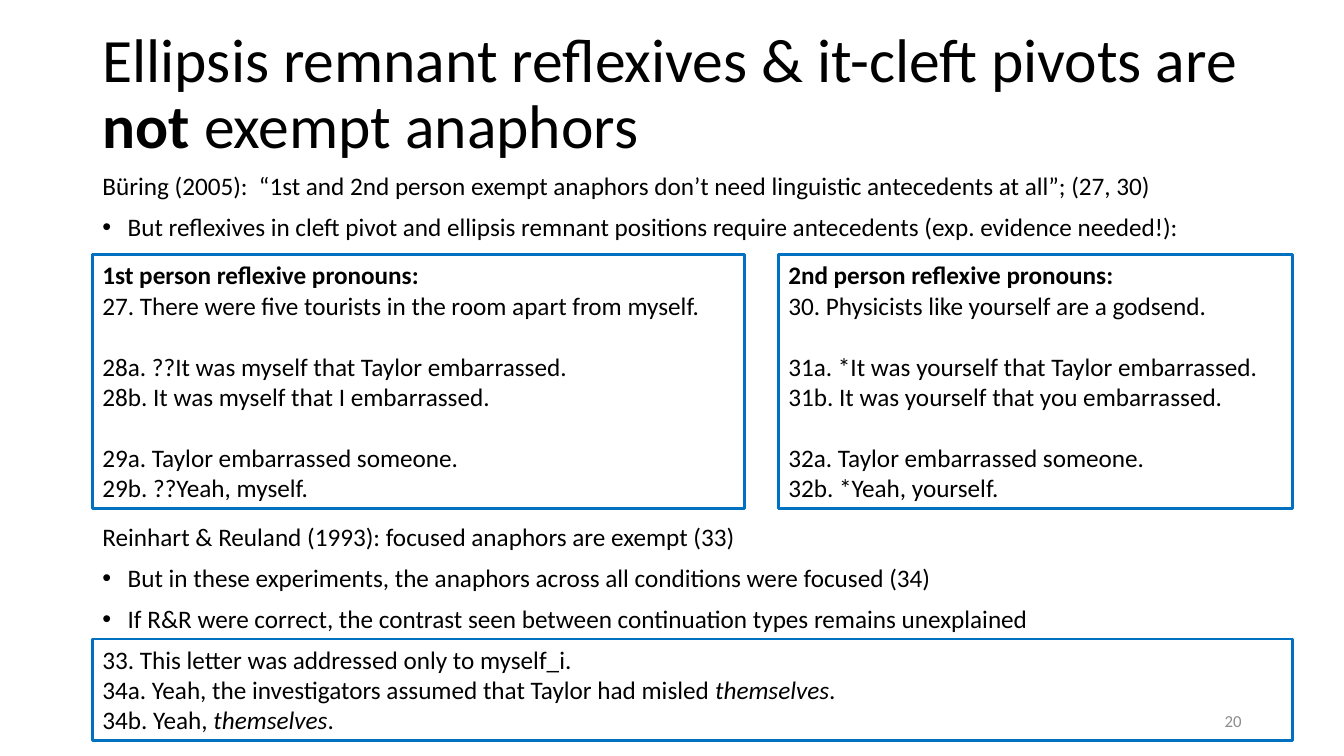
from dataclasses import dataclass

from lxml.etree import SubElement
from pptx import Presentation
from pptx.dml.color import RGBColor as RGB
from pptx.enum.shapes import MSO_SHAPE as SHAPE
from pptx.enum.text import MSO_ANCHOR as ANCHOR, MSO_AUTO_SIZE as AUTO, PP_ALIGN as ALIGN
from pptx.oxml.ns import qn
from pptx.util import Pt


@dataclass(frozen=True)
class Theme:
    font: str = "Calibri"
    ink: RGB = RGB(0x00, 0x00, 0x00)
    muted: RGB = RGB(0x8C, 0x8C, 0x8C)
    frame: RGB = RGB(0x00, 0x70, 0xC0)
    title: int = 44
    body: int = 18
    number: int = 12
    line: int = 2
    tight: float = 0.9
    list_gap: int = 10
    group_gap: int = 22
    indent: int = 18


class SlideBuilder:
    def __init__(self, slide, theme):
        self.slide, self.theme = slide, theme

    def place(self, sp, left, top, width, height):
        sp.left, sp.top, sp.width, sp.height = map(Pt, (left, top, width, height))

    def frame(self, sp, anchor=ANCHOR.TOP):
        """Prepare the text frame of a shape and return it."""
        tf = sp.text_frame
        tf.word_wrap = True
        tf.auto_size = AUTO.NONE
        tf.vertical_anchor = anchor
        return tf

    def paragraph(self, tf, first, align=ALIGN.LEFT):
        p = tf.paragraphs[0] if first else tf.add_paragraph()
        p.alignment = align
        return p

    def run(self, p, text, size, color=None, bold=False, italic=False):
        r = p.add_run()
        r.text = text
        font = r.font
        font.name, font.size, font.bold, font.italic = self.theme.font, Pt(size), bold, italic
        font.color.rgb = color or self.theme.ink

    def title(self, box, parts):
        """Fill the title with (text, bold) parts."""
        sp = self.slide.shapes.title
        self.place(sp, *box)
        p = self.paragraph(self.frame(sp, ANCHOR.MIDDLE), True)
        p.line_spacing = self.theme.tight
        for text, bold in parts:
            self.run(p, text, self.theme.title, bold=bold)

    def claim(self, idx, box, lead, points):
        """Fill a body placeholder with a plain lead line and bulleted points."""
        t = self.theme
        sp = self.slide.placeholders[idx]
        self.place(sp, *box)
        tf = self.frame(sp)
        for i, text in enumerate([lead, *points]):
            p = self.paragraph(tf, i == 0)
            p.line_spacing, p.space_before = t.tight, Pt(t.list_gap)
            indent = Pt(t.indent) if i else 0
            pPr = p._p.get_or_add_pPr()
            pPr.set("marL", str(indent))
            pPr.set("indent", str(-indent))
            if i:
                SubElement(pPr, qn("a:buFont"), typeface="Arial")
                SubElement(pPr, qn("a:buChar"), char="•")
            else:
                SubElement(pPr, qn("a:buNone"))
            self.run(p, text, t.body)

    def examples(self, box, groups, heading=None):
        """Draw a framed box of example groups; odd parts of a line are italic."""
        t = self.theme
        sp = self.slide.shapes.add_shape(SHAPE.RECTANGLE, *map(Pt, box))
        sp.shadow.inherit = False
        sp.fill.background()
        sp.line.color.rgb, sp.line.width = t.frame, Pt(t.line)
        tf = self.frame(sp)
        if heading:
            self.run(self.paragraph(tf, True), heading, t.body, bold=True)
        for g, group in enumerate(groups):
            for i, parts in enumerate(group):
                p = self.paragraph(tf, not heading and g == i == 0)
                if g and i == 0:
                    p.space_before = Pt(t.group_gap)
                for k, text in enumerate(parts):
                    self.run(p, text, t.body, italic=k % 2 == 1)

    def number(self, box, text):
        sp = self.slide.shapes.add_textbox(*map(Pt, box))
        p = self.paragraph(self.frame(sp, ANCHOR.MIDDLE), True, ALIGN.RIGHT)
        self.run(p, text, self.theme.number, self.theme.muted)


LEFT, WIDTH = 66, 857
PAIR_TOP, PAIR_HEIGHT = 182, 181.5

FIRST_PERSON = [
    [["27. There were five tourists in the room apart from myself."]],
    [["28a. ??It was myself that Taylor embarrassed."],
     ["28b. It was myself that I embarrassed."]],
    [["29a. Taylor embarrassed someone."], ["29b. ??Yeah, myself."]],
]
SECOND_PERSON = [
    [["30. Physicists like yourself are a godsend."]],
    [["31a. *It was yourself that Taylor embarrassed."],
     ["31b. It was yourself that you embarrassed."]],
    [["32a. Taylor embarrassed someone."], ["32b. *Yeah, yourself."]],
]
FOCUSED = [[
    ["33. This letter was addressed only to myself_i."],
    ["34a. Yeah, the investigators assumed that Taylor had misled ", "themselves", "."],
    ["34b. Yeah, ", "themselves", "."],
]]


def main():
    prs = Presentation()
    prs.slide_width, prs.slide_height = Pt(960), Pt(540)
    two_content = prs.slide_layouts[3]
    s = SlideBuilder(prs.slides.add_slide(two_content), Theme())

    s.title((LEFT, 16, 828, 104.4), [
        ("Ellipsis remnant reflexives & it-cleft pivots are ", False),
        ("not ", True),
        ("exempt anaphors", False),
    ])
    s.claim(1, (LEFT, 120.4, 861, 62),
            "Büring (2005):  “1st and 2nd person exempt anaphors don’t need "
            "linguistic antecedents at all”; (27, 30)",
            ["But reflexives in cleft pivot and ellipsis remnant positions require "
             "antecedents (exp. evidence needed!):"])
    s.examples((LEFT, PAIR_TOP, 466, PAIR_HEIGHT), FIRST_PERSON,
               "1st person reflexive pronouns:")
    s.examples((556, PAIR_TOP, 367, PAIR_HEIGHT), SECOND_PERSON,
               "2nd person reflexive pronouns:")
    s.claim(2, (LEFT, 371, WIDTH, 86),
            "Reinhart & Reuland (1993): focused anaphors are exempt (33)",
            ["But in these experiments, the anaphors across all conditions were focused (34)",
             "If R&R were correct, the contrast seen between continuation types "
             "remains unexplained"])
    s.examples((LEFT, 456.5, WIDTH, 72.7), FOCUSED)
    s.number((678, 500.5, 216, 28.8), "20")

    prs.save("out.pptx")


if __name__ == "__main__":
    main()
